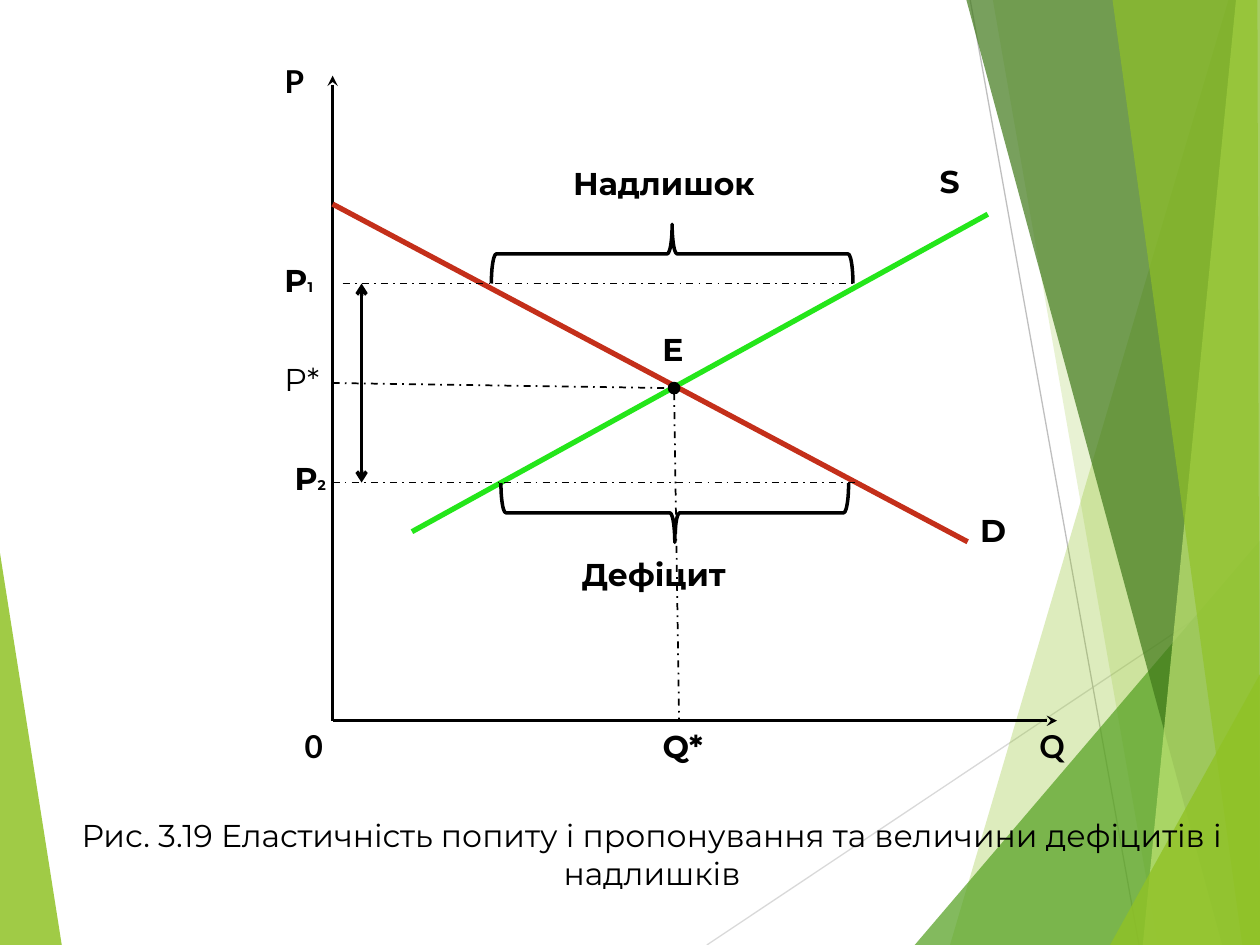
from pptx import Presentation
from pptx.util import Inches, Pt
from pptx.dml.color import RGBColor
from pptx.enum.dml import MSO_LINE
from pptx.enum.shapes import MSO_CONNECTOR, MSO_SHAPE
from pptx.enum.text import PP_ALIGN
from pptx.oxml.ns import qn
from lxml.etree import SubElement

BLACK = RGBColor(0x00, 0x00, 0x00)
RED = RGBColor(0xC4, 0x2F, 0x1A)
GREEN = RGBColor(0x24, 0xE6, 0x1A)
SILVER = RGBColor(0xD9, 0xD9, 0xD9)
GREY = RGBColor(0xBF, 0xBF, 0xBF)
LIME = RGBColor(0x90, 0xC2, 0x26)
LEAF = RGBColor(0x54, 0xA0, 0x21)
MOSS = RGBColor(0x3F, 0x78, 0x19)
PALE = RGBColor(0xC0, 0xE4, 0x74)

deck = Presentation()
deck.slide_width, deck.slide_height = Inches(10), Inches(7.5)
COL, ROW = deck.slide_width / 100, deck.slide_height / 75
slide = deck.slides.add_slide(deck.slide_layouts[6])
shapes = slide.shapes


def grid(*spots):
    return [round(n * (ROW if i % 2 else COL)) for i, n in enumerate(spots)]


def draw(ends, color, width, dash=None, head=None):
    line = shapes.add_connector(MSO_CONNECTOR.STRAIGHT, *grid(*ends))
    line.line.color.rgb = color
    line.line.width = Pt(width)
    if dash:
        line.line.dash_style = dash
    if head:
        SubElement(line.line._get_or_add_ln(), qn("a:tailEnd"), type=head)
    SubElement(line._element.spPr, qn("a:effectLst"))


draw((56.1, 75, 100, 45.7), SILVER, 0.75)
draw((77, 0, 90.4, 75), GREY, 0.75)

panes = [
    ([(0, 43.9), (4.9, 75), (0, 75)], LIME, 85),
    ([(97.5, 0), (75.4, 75), (100, 75), (100, 0)], LIME, 30),
    ([(78.8, 0), (91.9, 75), (100, 75), (100, 0)], LIME, 20),
    ([(72.6, 75), (100, 42.9), (100, 75)], LEAF, 72),
    ([(76.7, 0), (97, 75), (100, 75), (100, 0)], MOSS, 70),
    ([(98.1, 0), (90.7, 75), (100, 75), (100, 0)], PALE, 70),
    ([(88.3, 0), (98.6, 75), (100, 75), (99.8, 0)], LIME, 65),
    ([(88.1, 75), (100, 53.5), (100, 75)], LIME, 80),
]
for spots, color, share in panes:
    spots = [grid(*spot) for spot in spots]
    pen = shapes.build_freeform(*spots[0], scale=1)
    pen.add_line_segments(spots[1:], close=True)
    pane = pen.convert_to_shape()
    pane.shadow.inherit = False
    pane.fill.solid()
    pane.fill.fore_color.rgb = color
    pane.line.fill.background()
    tint = pane._element.spPr.find(qn("a:solidFill"))[0]
    SubElement(tint, qn("a:alpha"), val=str(share * 1000))

AXIS, BASE = 26.4, 57.2
HIGH, MID, LOW = 22.5, 30.4, 38.3
draw((AXIS, BASE, AXIS, 6), BLACK, 2, head="stealth")
draw((AXIS, BASE, 83.9, BASE), BLACK, 2, head="stealth")
draw((32.7, 42.2, 78.4, 17), GREEN, 3)
draw((AXIS, 16.2, 76.8, 43), RED, 3)
for ends in [(AXIS, MID, 53.1, 30.8), (53.5, 31.2, 53.9, BASE),
             (27.2, HIGH, 67.7, HIGH), (AXIS, LOW, 68.1, LOW)]:
    draw(ends, BLACK, 1, dash=MSO_LINE.DASH_DOT)
for end in (HIGH, LOW):
    draw((28.7, MID, 28.7, end), BLACK, 2, head="arrow")

dot = shapes.add_shape(MSO_SHAPE.OVAL, *grid(53.1, 30.4, 0.8, 0.8))
dot.shadow.inherit = False
dot.fill.solid()
dot.fill.fore_color.rgb = BLACK
dot.line.color.rgb = BLACK
dot.line.width = Pt(1.5)

for box, turn in [((51, 5.8, 4.7, 28.7), 270), ((51.2, 26.9, 4.7, 27.6), 90)]:
    brace = shapes.add_shape(MSO_SHAPE.RIGHT_BRACE, *grid(*box))
    brace.shadow.inherit = False
    brace.rotation = turn
    brace.fill.background()
    brace.line.color.rgb = BLACK
    brace.line.width = Pt(2)

labels = [
    ("P", "", 21.6, 4.4, 3.9, "Lato", True),
    ("Q", "", 81.5, BASE, 4.7, "Lato", True),
    ("0", "", 23.2, BASE, 3.9, "Lato", True),
    ("S", "", 73.6, 12.4, 3.9, "Montserrat", True),
    ("D", "", 76.8, 40.1, 4.7, "Montserrat", True),
    ("E", "", 51.6, 25.7, 2.4, "Montserrat", True),
    ("P*", "", 21.6, 28.1, 6.3, "Montserrat", False),
    ("Q*", "", 51.6, BASE, 5.5, "Montserrat", True),
    ("P", "1", 21.6, 20.2, 6.3, "Montserrat", True),
    ("P", "2", 22.4, 35.9, 4.7, "Montserrat", True),
    ("Надлишок", "", 44.5, 12.5, 18.1, "Montserrat", True),
    ("Дефіцит", "", 45.2, 43.6, 17.3, "Montserrat", True),
    ("Рис. 3.19 Еластичність попиту і пропонування та величини дефіцитів і надлишків",
     "", 3.5, 64.3, 96.5, "Montserrat", False),
]
for text, sub, left, top, wide, font, bold in labels:
    box = shapes.add_textbox(*grid(left, top, wide, 4))
    box.text_frame.word_wrap = True
    box.text_frame.text = text
    para = box.text_frame.paragraphs[0]
    if sub:
        para.add_run().text = sub
    for run, size in zip(para.runs, (18, 8)):
        run.font.name = font
        run.font.size = Pt(size)
        run.font.bold = bold
        run.font.color.rgb = BLACK
box.height = round(7.1 * ROW)
para.alignment = PP_ALIGN.CENTER

deck.save("out.pptx")
